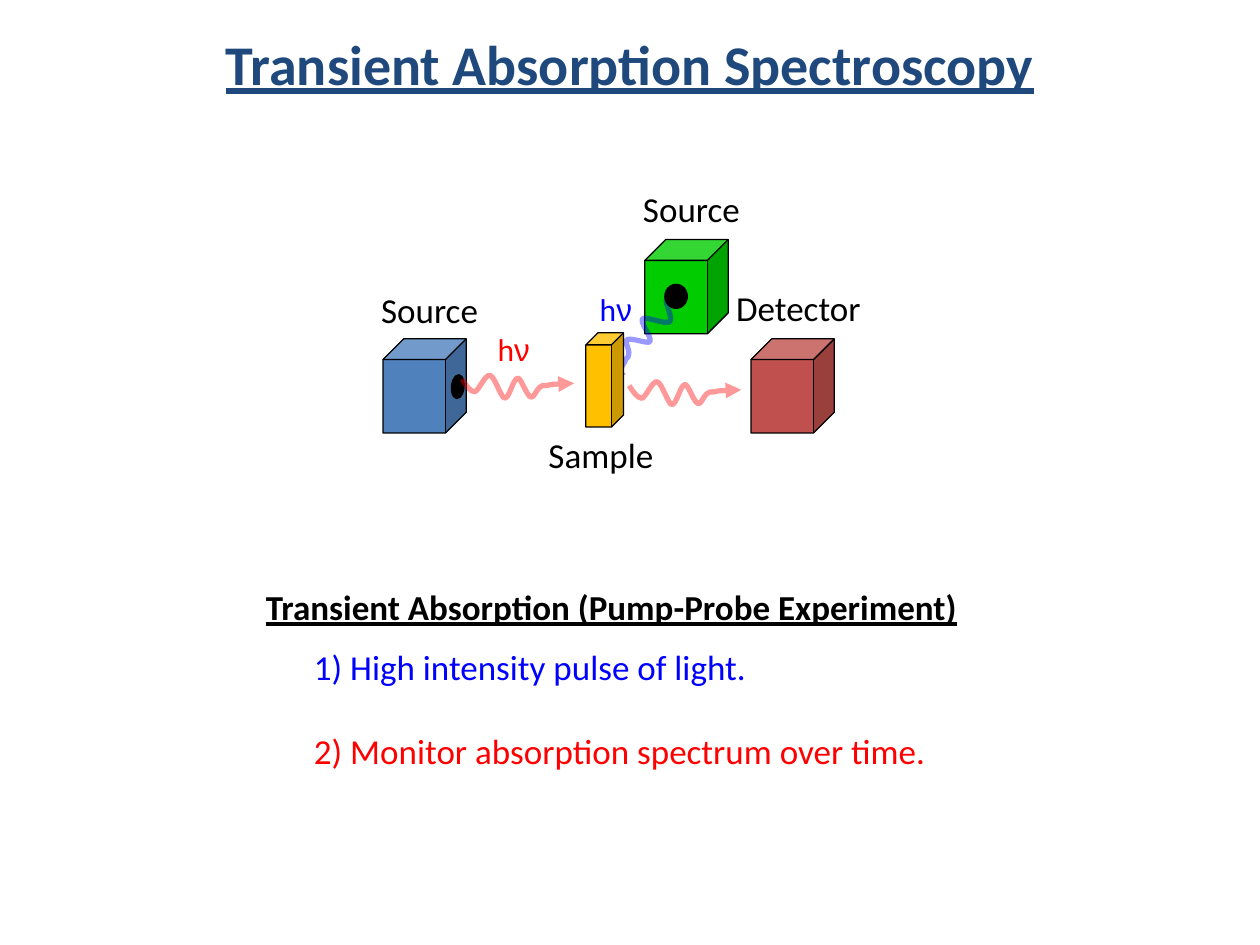
import lxml.etree
import pptx
import pptx.dml.color
import pptx.enum.shapes
import pptx.enum.text
import pptx.oxml.ns
import pptx.util
from dataclasses import dataclass

Cm = pptx.util.Cm
Pt = pptx.util.Pt
Shape = pptx.enum.shapes.MSO_SHAPE
Align = pptx.enum.text.PP_ALIGN
Anchor = pptx.enum.text.MSO_ANCHOR
AutoSize = pptx.enum.text.MSO_AUTO_SIZE
qn = pptx.oxml.ns.qn


@dataclass(frozen=True)
class Theme:
    font: str = "Calibri"
    greek_font: str = "Arial"
    title_size: int = 32
    text_size: int = 20
    light_size: int = 18
    title: str = "1F497D"
    black: str = "000000"
    pump: str = "0000FF"
    probe: str = "FF0000"
    pump_source: str = "00CC00"
    probe_source: str = "4F81BD"
    sample: str = "FFC000"
    detector: str = "C0504D"


# Light wave from its tip back to its tail, in hundredths of a cm:
# the tip, then two control points and an end point for each curve
WAVE_TIP = (226, 0)
WAVE_CURVES = [
    ((226, 0), (183, 5), (170, 10)),
    ((160, 10), (165, 10), (157, 15)),
    ((152, 20), (147, 38), (142, 36)),
    ((132, 33), (119, 0), (112, 0)),
    ((102, 3), (99, 43), (89, 43)),
    ((81, 41), (66, 3), (56, 0)),
    ((46, -3), (36, 33), (28, 36)),
    ((18, 36), (10, 25), (0, 13)),
]


def apply(target, formats):
    for attribute, value in formats.items():
        setattr(target, attribute, value)


def rgb(colour):
    return pptx.dml.color.RGBColor.from_string(colour)


def add_child(parent, tag, **attributes):
    return lxml.etree.SubElement(parent, qn(tag), **attributes)


class SlideBuilder:
    def __init__(self, slide, theme):
        self.shapes = slide.shapes
        self.theme = theme

    def text_box(self, left, top, width, height, **formats):
        box = self.shapes.add_textbox(Cm(left), Cm(top), Cm(width), Cm(height))
        apply(box.text_frame, {"word_wrap": True,
                               "auto_size": AutoSize.SHAPE_TO_FIT_TEXT, **formats})
        return box.text_frame

    def run(self, paragraph, text, colour, size, **formats):
        run = paragraph.add_run()
        run.text = text
        apply(run.font, {"name": self.theme.font, "size": Pt(size), **formats})
        run.font.color.rgb = rgb(colour)

    def label(self, text, left, top, width):
        paragraph = self.text_box(left, top, width, 1.12).paragraphs[0]
        paragraph.alignment = Align.CENTER
        self.run(paragraph, text, self.theme.black, self.theme.text_size)

    def photon_label(self, left, top, width, colour):
        paragraph = self.text_box(left, top, width, 1.02).paragraphs[0]
        self.run(paragraph, "h", colour, self.theme.light_size)
        self.run(paragraph, "ν", colour, self.theme.light_size,
                 name=self.theme.greek_font)

    def solid(self, kind, left, top, width, height, colour):
        shape = self.shapes.add_shape(kind, Cm(left), Cm(top), Cm(width), Cm(height))
        shape.shadow.inherit = False
        shape.fill.solid()
        shape.fill.fore_color.rgb = rgb(colour)
        return shape

    def cube(self, left, top, colour, width=1.68, depth=0.25):
        cube = self.solid(Shape.CUBE, left, top, width, 1.9, colour)
        cube.adjustments[0] = depth
        cube.line.color.rgb = rgb(self.theme.black)
        cube.line.width = Pt(0)

    def aperture(self, left, top, width, rotation=0):
        hole = self.solid(Shape.OVAL, left, top, width, 0.51, self.theme.black)
        hole.line.fill.background()
        hole.rotation = rotation

    def wave(self, left, top, rotation, colour):
        builder = self.shapes.build_freeform(*WAVE_TIP, scale=Cm(0.01))
        builder.add_line_segments([curve[-1] for curve in WAVE_CURVES], close=False)
        wave = builder.convert_to_shape(Cm(left), Cm(top))
        wave.shadow.inherit = False
        wave.fill.background()
        wave.rotation = rotation
        wave.line.color.rgb = rgb(colour)
        wave.line.width = Pt(3)

        # Bend the straight segments into curves
        segments = list(wave._element.iter(qn("a:lnTo")))
        for segment, curve in zip(segments, WAVE_CURVES):
            outline_path = segment.getparent()
            bend = add_child(outline_path, "a:cubicBezTo")
            for x, y in curve:
                add_child(bend, "a:pt", x=str(x), y=str(y))
            outline_path.remove(segment)

        # Transparency and arrowhead
        outline = wave._element.spPr.find(qn("a:ln"))
        add_child(outline.find(".//" + qn("a:srgbClr")), "a:alpha", val="40000")
        add_child(outline, "a:headEnd", type="triangle")

    def title(self, text):
        frame = self.text_box(1.27, 0, 22.86, 2.54, auto_size=AutoSize.NONE,
                              vertical_anchor=Anchor.MIDDLE)
        paragraph = frame.paragraphs[0]
        paragraph.alignment = Align.CENTER
        self.run(paragraph, text, self.theme.title, self.theme.title_size,
                 bold=True, underline=True)

    def steps(self, heading, steps):
        frame = self.text_box(5.11, 11.68, 14.68, 4.04)
        size = self.theme.text_size
        paragraph = frame.paragraphs[0]
        paragraph.space_after = Pt(10)
        self.run(paragraph, heading, self.theme.black, size,
                 bold=True, underline=True)
        for index, (text, colour) in enumerate(steps):
            paragraph = frame.add_paragraph()
            paragraph.space_before = Pt(24.4 * index)
            paragraph._p.get_or_add_pPr().set("marL", str(Cm(0.97)))
            self.run(paragraph, text, colour, size)


def main():
    theme = Theme()
    deck = pptx.Presentation()
    deck.slide_width, deck.slide_height = Cm(25.4), Cm(19.05)
    page = SlideBuilder(deck.slides.add_slide(deck.slide_layouts[6]), theme)

    # Pump source, sample label and detector
    page.cube(13, 4.83, theme.pump_source)
    page.label("Source", 12.52, 3.66, 2.84)
    page.photon_label(11.84, 5.72, 1.27, theme.pump)
    page.label("Sample", 10.44, 8.61, 3.35)
    page.label("Detector", 14.15, 5.66, 3.89)
    page.cube(15.14, 6.83, theme.detector)

    # Light reaching and leaving the sample
    page.wave(11.81, 6.53, 134.6, theme.pump)
    page.wave(12.67, 7.75, 5.4, theme.probe)
    page.aperture(13.39, 5.72, 0.48)
    page.cube(11.81, 6.71, theme.sample, width=0.76, depth=0.32)

    # Probe source and its light
    page.cube(7.72, 6.83, theme.probe_source)
    page.label("Source", 7.24, 5.69, 2.84)
    page.aperture(9.09, 7.54, 0.28, rotation=5.7)
    page.photon_label(9.78, 6.53, 1.47, theme.probe)
    page.wave(9.3, 7.62, 5.4, theme.probe)

    # Explanation and title
    page.steps("Transient Absorption (Pump-Probe Experiment)", [
        ("1) High intensity pulse of light.", theme.pump),
        ("2) Monitor absorption spectrum over time.", theme.probe),
    ])
    page.title("Transient Absorption Spectroscopy")

    deck.save("out.pptx")


if __name__ == "__main__":
    main()
